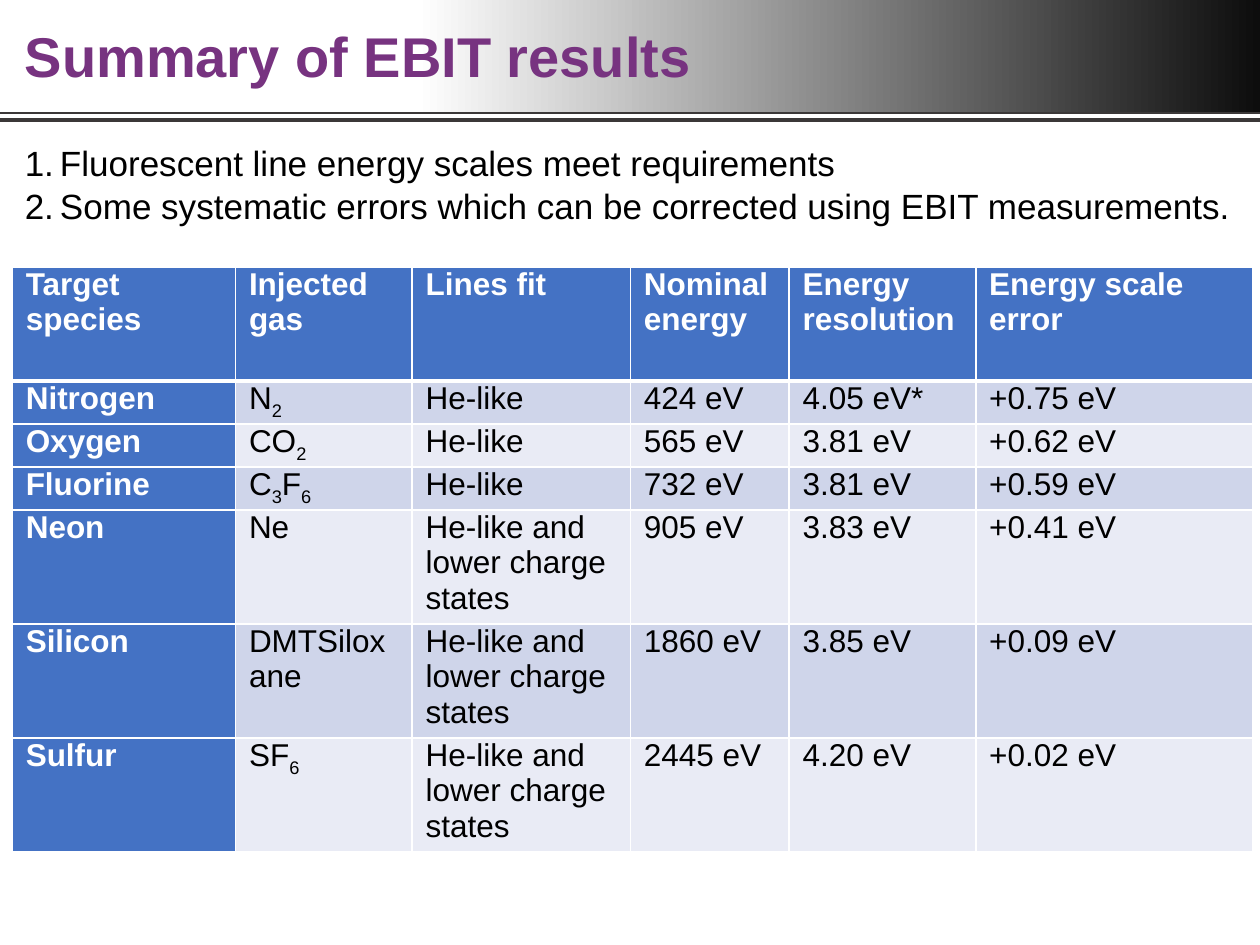
"""Build the summary slide of EBIT results with its header band, findings and table."""
from dataclasses import dataclass
from itertools import groupby

from lxml import etree
from pptx import Presentation
from pptx.dml.color import RGBColor
from pptx.enum.shapes import MSO_CONNECTOR, MSO_SHAPE
from pptx.enum.text import MSO_ANCHOR
from pptx.oxml.ns import qn
from pptx.util import Cm, Pt

RECTANGLE = MSO_SHAPE.RECTANGLE
STRAIGHT = MSO_CONNECTOR.STRAIGHT
MIDDLE = MSO_ANCHOR.MIDDLE

WHITE = RGBColor(0xFF, 0xFF, 0xFF)
BLACK = RGBColor(0x00, 0x00, 0x00)
NEAR_BLACK = RGBColor(0x0D, 0x0D, 0x0D)
RULE_GREY = RGBColor(0x3B, 0x38, 0x38)
PURPLE = RGBColor(0x77, 0x33, 0x80)
BLUE = RGBColor(0x44, 0x72, 0xC4)
BANDS = (RGBColor(0xCF, 0xD5, 0xEA), RGBColor(0xE9, 0xEB, 0xF5))

FONT = "Arial"
SLIDE_WIDTH, SLIDE_HEIGHT = 25.4, 19.05


@dataclass(frozen=True)
class Box:
    left: float
    top: float
    width: float
    height: float

    def lengths(self) -> tuple:
        return Cm(self.left), Cm(self.top), Cm(self.width), Cm(self.height)


@dataclass(frozen=True)
class TextStyle:
    size: int
    color: RGBColor
    bold: bool = False


@dataclass(frozen=True)
class Measurement:
    species: str
    gas: str
    lines: str
    energy: str
    resolution: str
    error: str
    height: float


TITLE_STYLE = TextStyle(32, PURPLE, True)
FINDING_STYLE = TextStyle(20, BLACK)
HEADING_STYLE = TextStyle(18, WHITE, True)
VALUE_STYLE = TextStyle(18, BLACK)

SHORT_ROW, TALL_ROW = 0.76, 2.3
HE_LIKE = "He-like"
HE_LIKE_AND_LOWER = "He-like and lower charge states"

FINDINGS = (
    "Fluorescent line energy scales meet requirements",
    "Some systematic errors which can be corrected using EBIT measurements.",
)
HEADINGS = ("Target species", "Injected gas", "Lines fit", "Nominal\nenergy",
            "Energy resolution", "Energy scale error")
COLUMN_WIDTHS = (4.5, 3.56, 4.4, 3.2, 3.76, 5.59)
MEASUREMENTS = (
    Measurement("Nitrogen", "N2", HE_LIKE, "424 eV", "4.05 eV*", "+0.75 eV", SHORT_ROW),
    Measurement("Oxygen", "CO2", HE_LIKE, "565 eV", "3.81 eV", "+0.62 eV", SHORT_ROW),
    Measurement("Fluorine", "C3F6", HE_LIKE, "732 eV", "3.81 eV", "+0.59 eV", SHORT_ROW),
    Measurement("Neon", "Ne", HE_LIKE_AND_LOWER, "905 eV", "3.83 eV", "+0.41 eV", TALL_ROW),
    Measurement("Silicon", "DMTSiloxane", HE_LIKE_AND_LOWER, "1860 eV", "3.85 eV", "+0.09 eV",
                TALL_ROW),
    Measurement("Sulfur", "SF6", HE_LIKE_AND_LOWER, "2445 eV", "4.20 eV", "+0.02 eV", TALL_ROW),
)


def add_run(paragraph, text: str, style: TextStyle, subscript: bool = False) -> None:
    run = paragraph.add_run()
    run.text = text
    run.font.name = FONT
    run.font.size = Pt(style.size)
    run.font.bold = style.bold
    run.font.color.rgb = style.color
    if subscript:
        run.font._element.set("baseline", "-25000")


def add_formula(paragraph, formula: str, style: TextStyle) -> None:
    for is_digit, symbols in groupby(formula, str.isdigit):
        add_run(paragraph, "".join(symbols), style, is_digit)


def add_band(slide, box: Box):
    shape = slide.shapes.add_shape(RECTANGLE, *box.lengths())
    shape.shadow.inherit = False
    shape.line.fill.background()
    return shape


def draw_header(slide) -> None:
    fade = add_band(slide, Box(8.38, 0, 17.02, 2.34))
    fade.fill.gradient()
    fade.fill.gradient_angle = 0
    for stop, color in zip(fade.fill.gradient_stops, (WHITE, NEAR_BLACK)):
        stop.color.rgb = color

    rule = add_band(slide, Box(0, 2.26, SLIDE_WIDTH, 0.2))
    rule.fill.solid()
    rule.fill.fore_color.rgb = RULE_GREY

    gap = slide.shapes.add_connector(STRAIGHT, 0, Cm(2.34), Cm(SLIDE_WIDTH), Cm(2.34))
    gap.line.color.rgb = WHITE
    gap.line.width = Pt(2)
    etree.SubElement(gap._element.spPr, qn("a:effectLst"))


def draw_title(slide, text: str) -> None:
    frame = slide.shapes.add_textbox(*Box(0.25, 0, 20.29, 2.39).lengths()).text_frame
    frame.word_wrap = True
    frame.vertical_anchor = MIDDLE
    frame.paragraphs[0].line_spacing = 0.9
    add_run(frame.paragraphs[0], text, TITLE_STYLE)


def draw_findings(slide, findings: tuple[str, ...]) -> None:
    frame = slide.shapes.add_textbox(*Box(0.25, 2.72, 25, 1.96).lengths()).text_frame
    frame.word_wrap = False
    for index, finding in enumerate(findings):
        paragraph = frame.add_paragraph() if index else frame.paragraphs[0]
        properties = paragraph._p.get_or_add_pPr()
        properties.set("marL", str(Cm(0.71)))
        properties.set("indent", str(-Cm(0.71)))
        etree.SubElement(properties, qn("a:buAutoNum"), type="arabicPeriod")
        if index:
            paragraph.space_before = Pt(1)
        add_run(paragraph, finding, FINDING_STYLE)


def set_borders(cell, bottom_width: int) -> None:
    properties = cell._tc.get_or_add_tcPr()
    widths = {"a:lnL": 1, "a:lnR": 1, "a:lnT": 1, "a:lnB": bottom_width}
    for position, (tag, width) in enumerate(widths.items()):
        border = etree.Element(qn(tag), w=str(Pt(width)))
        fill = etree.SubElement(border, qn("a:solidFill"))
        etree.SubElement(fill, qn("a:srgbClr"), val=str(WHITE))
        properties.insert(position, border)


def fill_cell(cell, text: str, style: TextStyle, color: RGBColor,
              bottom_width: int = 1, formula: bool = False) -> None:
    cell.margin_left = cell.margin_right = Cm(0.27)
    cell.margin_top = cell.margin_bottom = 0
    cell.fill.solid()
    cell.fill.fore_color.rgb = color
    set_borders(cell, bottom_width)
    write = add_formula if formula else add_run
    for index, line in enumerate(text.split("\n")):
        paragraph = cell.text_frame.add_paragraph() if index else cell.text_frame.paragraphs[0]
        write(paragraph, line, style)


def draw_results(slide, measurements: tuple[Measurement, ...]) -> None:
    heights = (TALL_ROW, *(measurement.height for measurement in measurements))
    box = Box(0.25, 5.38, sum(COLUMN_WIDTHS), sum(heights))
    table = slide.shapes.add_table(len(heights), len(HEADINGS), *box.lengths()).table
    for column, width in zip(table.columns, COLUMN_WIDTHS):
        column.width = Cm(width)
    for row, height in zip(table.rows, heights):
        row.height = Cm(height)
    for index, heading in enumerate(HEADINGS):
        fill_cell(table.cell(0, index), heading, HEADING_STYLE, BLUE, bottom_width=3)
    for index, result in enumerate(measurements):
        band = BANDS[index % 2]
        species, gas, *others = table.rows[index + 1].cells
        fill_cell(species, result.species, HEADING_STYLE, BLUE)
        fill_cell(gas, result.gas, VALUE_STYLE, band, formula=True)
        values = (result.lines, result.energy, result.resolution, result.error)
        for cell, value in zip(others, values):
            fill_cell(cell, value, VALUE_STYLE, band)


def main() -> None:
    presentation = Presentation()
    presentation.slide_width = Cm(SLIDE_WIDTH)
    presentation.slide_height = Cm(SLIDE_HEIGHT)
    slide = presentation.slides.add_slide(presentation.slide_layouts[6])
    draw_header(slide)
    draw_title(slide, "Summary of EBIT results")
    draw_results(slide, MEASUREMENTS)
    draw_findings(slide, FINDINGS)
    presentation.save("out.pptx")


if __name__ == "__main__":
    main()
